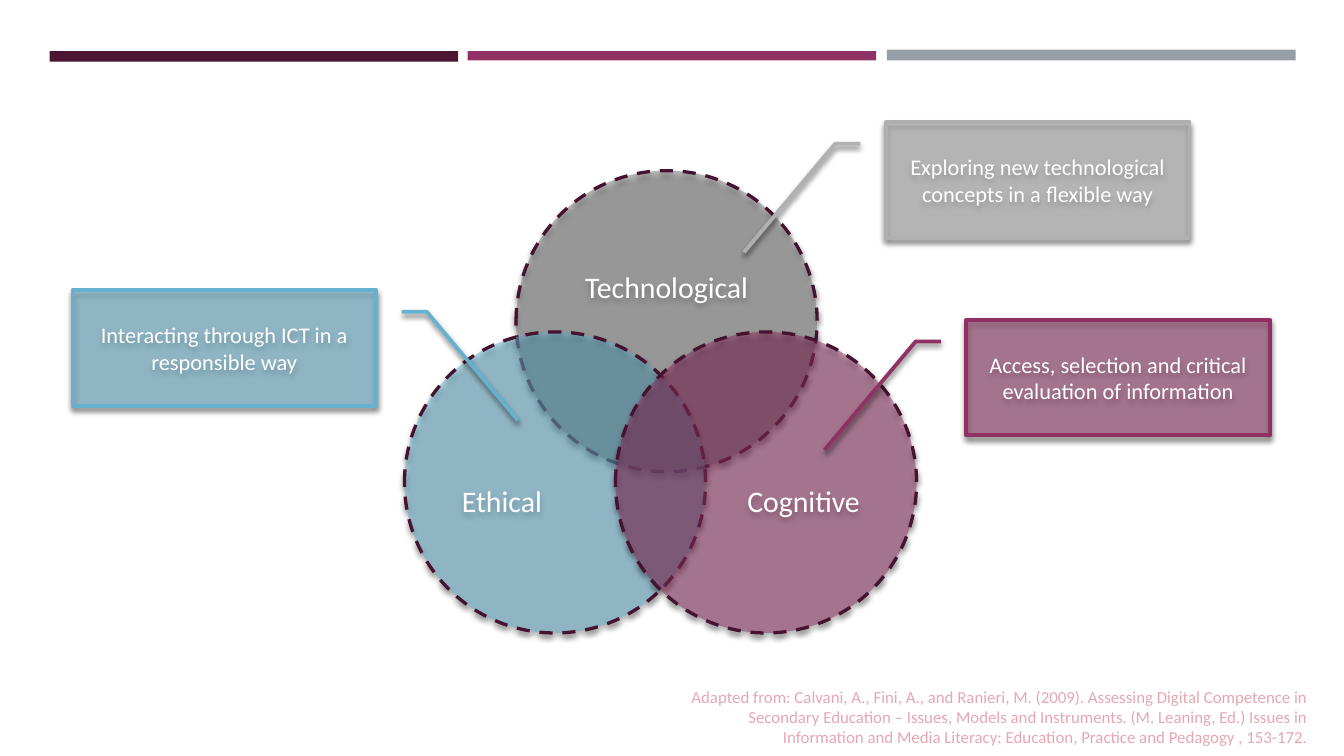
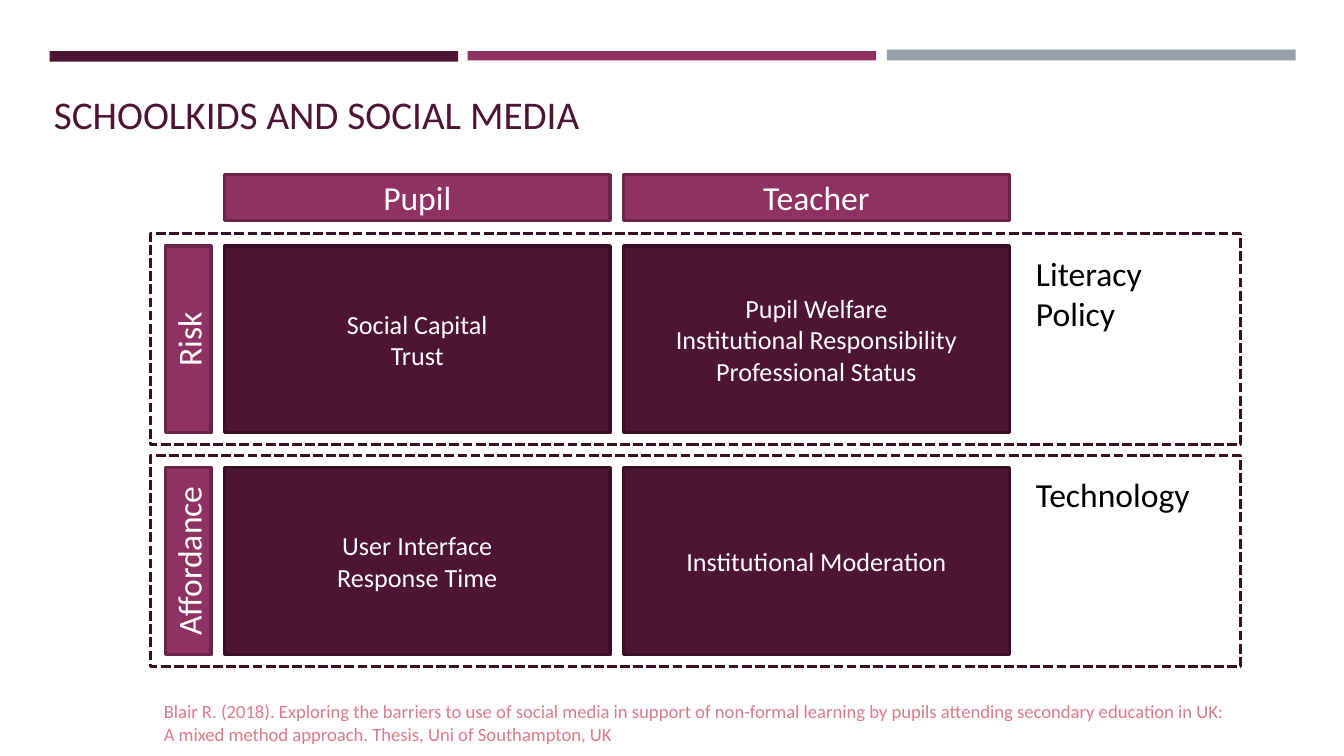
"""Build two slides on digital competence and on pupils' social media use."""
from pptx import Presentation
from pptx.dml.color import RGBColor
from pptx.enum.dml import MSO_LINE
from pptx.enum.shapes import MSO_SHAPE as SHAPE
from pptx.enum.text import MSO_ANCHOR as ANCHOR, MSO_AUTO_SIZE as AUTO_SIZE, PP_ALIGN as ALIGN
from pptx.oxml import parse_xml
from pptx.oxml.ns import nsdecls, qn
from pptx.util import Inches, Pt

SLIDE_WIDTH = Inches(10)
SLIDE_HEIGHT = SLIDE_WIDTH * 9 // 16

PLUM, MAGENTA, SLATE, BLUE = "4D1434", "903163", "969FA7", "66B1CE"
GREY, SILVER, WHITE, BLACK = "767676", "B0B0B0", "FFFFFF", "000000"
PLUM_EDGE, MAGENTA_EDGE, CIRCLE_EDGE = "390F26", "6B2449", "45122F"
FONT = "Calibri"

BARS = [(0.37, 0.38, 0.08, PLUM), (3.48, 0.38, 0.07, MAGENTA), (6.6, 0.37, 0.08, SLATE)]
BAR_WIDTH = 3.04

CIRCLE_SIZE = 2.24
CIRCLES = [
    ("Technological", 3.84, 1.27, GREY, {"margin_bottom": 0.52}),
    ("Ethical", 3.01, 2.47, BLUE, {"margin_top": 0.27, "margin_right": 0.79}),
    ("Cognitive", 4.58, 2.47, MAGENTA, {"margin_top": 0.27, "margin_left": 0.56}),
]
CALLOUT_WIDTH, CALLOUT_HEIGHT = 2.26, 0.86
CALLOUTS = [
    ("Exploring new technological concepts in a flexible way", 6.59, 0.91, SILVER, False),
    ("Access, selection and critical evaluation of information", 7.19, 2.38, MAGENTA, False),
    ("Interacting through ICT in a responsible way", 0.54, 2.16, BLUE, True),
]
VENN_SOURCE = (
    "Adapted from: Calvani, A., Fini, A., and Ranieri, M. (2009). Assessing Digital Competence in "
    "Secondary Education – Issues, Models and Instruments. (M. Leaning, Ed.) Issues in "
    "Information and Media Literacy: Education, Practice and Pedagogy , 153-172."
)

MATRIX_TITLE = "SCHOOLKIDS AND SOCIAL MEDIA"
COLUMNS = ["Pupil", "Teacher"]
ROWS = [
    ("Risk", [["Social Capital", "Trust"],
              ["Pupil Welfare", "Institutional Responsibility", "Professional Status"]],
     ["Literacy", "Policy"], (1.02, 0.71)),
    ("Affordance", [["User Interface", "Response Time"], ["Institutional Moderation"]],
     ["Technology"], (1.36, 0.4)),
]
MATRIX_LEFT, MATRIX_TOP, HEADER_TOP = 1.67, 1.83, 1.3
CELL_WIDTH, CELL_HEIGHT, LABEL_HEIGHT = 2.87, 1.39, 0.34
COLUMN_STEP, ROW_STEP = 2.97, 1.65
FRAME_LEFT, FRAME_WIDTH, FRAME_PAD = 1.12, 8.11, 0.09
ROW_LABEL_CENTER, NOTE_LEFT = 1.4, 7.61
MATRIX_SOURCE = (
    "Blair R. (2018). Exploring the barriers to use of social media in support of non-formal "
    "learning by pupils attending secondary education in UK: A mixed method approach. "
    "Thesis, Uni of Southampton, UK"
)


def color(value):
    """Return the colour for a hex string."""
    return RGBColor.from_string(value)


def set_values(target, values):
    """Set each named attribute of the target."""
    for name, value in values.items():
        setattr(target, name, value)


def write(shape, lines, size, ink, align=ALIGN.LEFT, **frame_values):
    """Fill a shape with one paragraph per line in one style."""
    frame = shape.text_frame
    set_values(frame, {"word_wrap": True, "auto_size": AUTO_SIZE.NONE, **frame_values})
    frame.text = "\n".join(lines)
    for paragraph in frame.paragraphs:
        paragraph.alignment = align
        for run in paragraph.runs:
            set_values(run.font, {"name": FONT, "size": Pt(size)})
            run.font.color.rgb = color(ink)


def add_text(slide, box, lines, size, ink, align=ALIGN.LEFT, **frame_values):
    """Add a text box."""
    text_box = slide.shapes.add_textbox(*map(Inches, box))
    write(text_box, lines, size, ink, align, **frame_values)


def add_shape(slide, kind, box, fill=None, edge=None, weight=1.75, dash=None):
    """Add a flat preset shape with an optional fill and outline."""
    shape = slide.shapes.add_shape(kind, *map(Inches, box))
    shape.shadow.inherit = False
    if fill:
        shape.fill.solid()
        shape.fill.fore_color.rgb = color(fill)
    else:
        shape.fill.background()
    if edge:
        shape.line.color.rgb = color(edge)
        set_values(shape.line, {"width": Pt(weight), "dash_style": dash})
    else:
        shape.line.fill.background()
    return shape


def make_glassy(shape):
    """Make the fill half transparent and drop a soft shadow."""
    properties = shape._element.spPr
    fill_color = properties.find(qn("a:solidFill")).find(qn("a:srgbClr"))
    fill_color.append(parse_xml(f'<a:alpha {nsdecls("a")} val="50000"/>'))
    properties.find(qn("a:effectLst")).append(parse_xml(
        f'<a:outerShdw {nsdecls("a")} blurRad="{Pt(3)}" dist="{Pt(2)}" dir="5400000" '
        f'rotWithShape="0"><a:srgbClr val="{BLACK}"><a:alpha val="55000"/></a:srgbClr></a:outerShdw>'))


def add_slide(presentation, layout_name):
    """Add a slide with the three bars on top."""
    slide = presentation.slides.add_slide(presentation.slide_layouts.get_by_name(layout_name))
    for left, top, height, fill in BARS:
        add_shape(slide, SHAPE.RECTANGLE, (left, top, BAR_WIDTH, height), fill)
    return slide


def build_venn(presentation):
    """Draw the three overlapping competences and their callouts."""
    slide = add_slide(presentation, "Blank")
    add_text(slide, (4.88, 5.06, 4.94, 0.56), [VENN_SOURCE], 9, "E6A7B3", ALIGN.RIGHT)
    for name, left, top, fill, insets in CIRCLES:
        circle = add_shape(slide, SHAPE.OVAL, (left, top, CIRCLE_SIZE, CIRCLE_SIZE), fill,
                           CIRCLE_EDGE, dash=MSO_LINE.DASH)
        make_glassy(circle)
        sides = dict.fromkeys(("margin_left", "margin_top", "margin_right", "margin_bottom"), 0)
        margins = {side: Inches(inset) for side, inset in {**sides, **insets}.items()}
        write(circle, [name], 16, WHITE, ALIGN.CENTER, vertical_anchor=ANCHOR.MIDDLE, **margins)
    for text, left, top, fill, flipped in CALLOUTS:
        callout = add_shape(slide, SHAPE.LINE_CALLOUT_2, (left, top, CALLOUT_WIDTH, CALLOUT_HEIGHT),
                            fill, fill, 2)
        make_glassy(callout)
        if flipped:
            callout._element.spPr.xfrm.set("flipH", "1")
        write(callout, [text], 12, WHITE, ALIGN.CENTER, vertical_anchor=ANCHOR.MIDDLE)


def add_cell(slide, box, lines, size, fill, edge):
    """Add a filled matrix box with centred text."""
    cell = add_shape(slide, SHAPE.RECTANGLE, box, fill, edge)
    write(cell, lines, size, WHITE, ALIGN.CENTER, vertical_anchor=ANCHOR.MIDDLE)
    return cell


def build_matrix(presentation):
    """Draw risks and affordances for pupils and teachers."""
    slide = add_slide(presentation, "Title Only")
    title = slide.shapes.title
    set_values(title, {"left": Inches(0.3), "top": Inches(0.19),
                       "width": Inches(9.4), "height": Inches(0.88)})
    write(title, [MATRIX_TITLE], 21, PLUM, vertical_anchor=ANCHOR.BOTTOM)

    lefts = [MATRIX_LEFT + index * COLUMN_STEP for index in range(len(COLUMNS))]
    for left, name in zip(lefts, COLUMNS):
        add_cell(slide, (left, HEADER_TOP, CELL_WIDTH, LABEL_HEIGHT), [name], 18,
                 MAGENTA, MAGENTA_EDGE)
    for index, (name, cells, note, note_size) in enumerate(ROWS):
        top = MATRIX_TOP + index * ROW_STEP
        add_shape(slide, SHAPE.RECTANGLE,
                  (FRAME_LEFT, top - FRAME_PAD, FRAME_WIDTH, CELL_HEIGHT + 2 * FRAME_PAD),
                  edge=PLUM_EDGE, dash=MSO_LINE.SQUARE_DOT)
        label_box = (ROW_LABEL_CENTER - CELL_HEIGHT / 2, top + (CELL_HEIGHT - LABEL_HEIGHT) / 2,
                     CELL_HEIGHT, LABEL_HEIGHT)
        add_cell(slide, label_box, [name], 18, MAGENTA, MAGENTA_EDGE).rotation = 270
        for left, lines in zip(lefts, cells):
            add_cell(slide, (left, top, CELL_WIDTH, CELL_HEIGHT), lines, 14, PLUM, PLUM_EDGE)
        add_text(slide, (NOTE_LEFT, top, *note_size), note, 18, BLACK, word_wrap=False)
    add_text(slide, (FRAME_LEFT, 5.16, FRAME_WIDTH, 0.44), [MATRIX_SOURCE], 10, "DA7B8D")


def main():
    """Build and save the presentation."""
    presentation = Presentation()
    set_values(presentation, {"slide_width": SLIDE_WIDTH, "slide_height": SLIDE_HEIGHT})
    build_venn(presentation)
    build_matrix(presentation)
    presentation.save("out.pptx")


if __name__ == "__main__":
    main()
